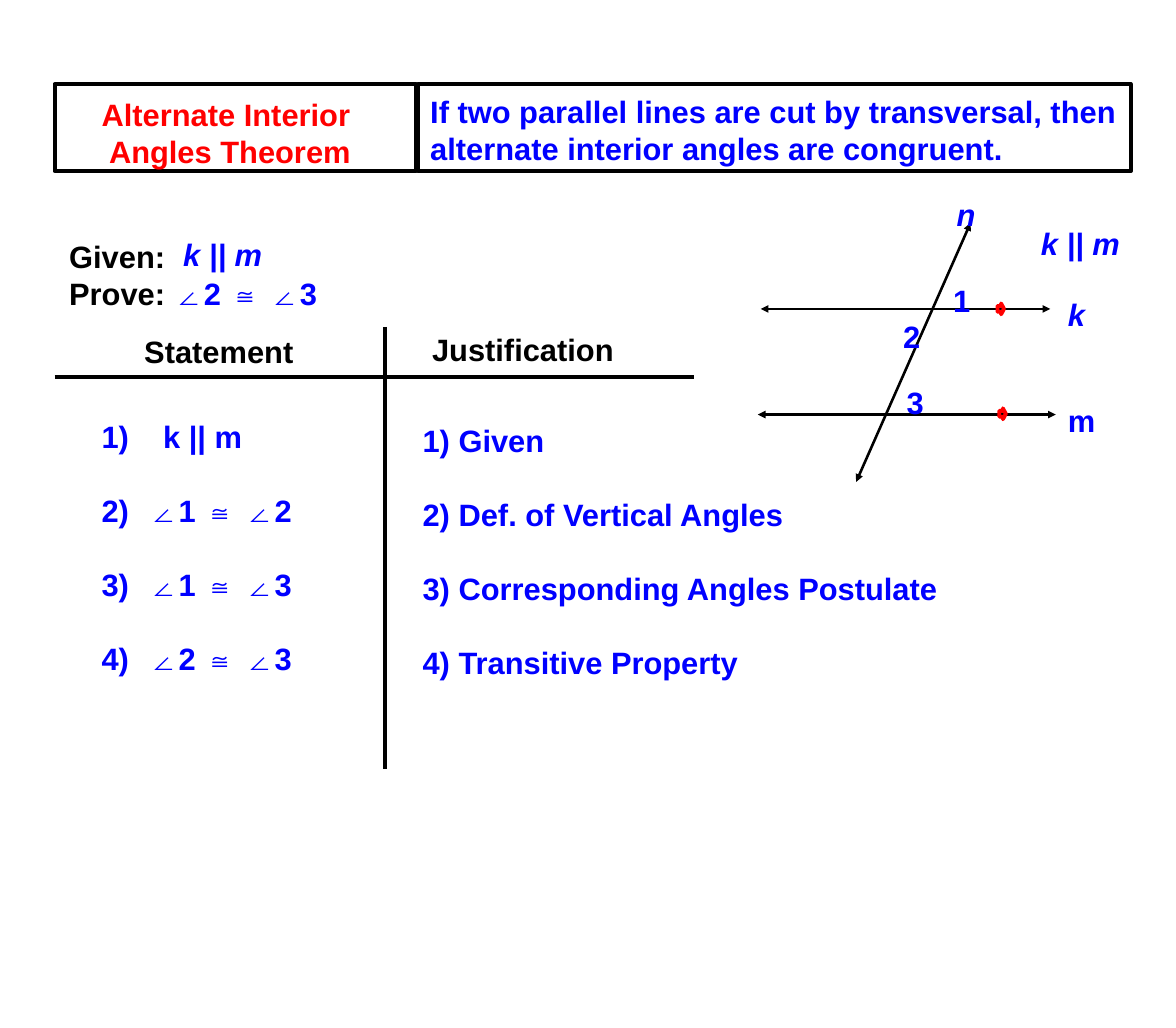
import pptx
import pptx.util
import pptx.dml.color
import pptx.enum.shapes
import pptx.oxml.ns
from lxml import etree

Cm, Pt = pptx.util.Cm, pptx.util.Pt
BLACK = pptx.dml.color.RGBColor(0x00, 0x00, 0x00)
BLUE = pptx.dml.color.RGBColor(0x00, 0x00, 0xFF)
RED = pptx.dml.color.RGBColor(0xFF, 0x00, 0x00)
WHITE = pptx.dml.color.RGBColor(0xFF, 0xFF, 0xFF)

LINE_HEIGHT = Pt(28.8)
HANGING = Cm(1.27)
ONE_LINE = 1.27
TWO_LINES = 2.31


def add_text(slide, text, left, top, width, height=ONE_LINE, *, color=BLUE,
             italic=False, gap=Pt(0), indents=()):
    """Write one paragraph per line; indents holds a hanging indent for each line."""
    box = slide.shapes.add_textbox(Cm(left), Cm(top), Cm(width), Cm(height))
    frame = box.text_frame
    frame.word_wrap = True
    frame.text = text
    for index, paragraph in enumerate(frame.paragraphs):
        paragraph.line_spacing = LINE_HEIGHT
        paragraph.space_before = gap if index else Pt(0)
        for run in paragraph.runs:
            run.font.name = "Arial"
            run.font.size = Pt(24)
            run.font.bold = True
            run.font.italic = italic
            run.font.color.rgb = color
    for paragraph, indent in zip(frame.paragraphs, indents):
        properties = paragraph._p.get_or_add_pPr()
        properties.set("marL", str(indent))
        properties.set("indent", str(-indent))


def add_line(slide, x1, y1, x2, y2, *, weight=3, arrows=False):
    line = slide.shapes.add_connector(
        pptx.enum.shapes.MSO_CONNECTOR.STRAIGHT, Cm(x1), Cm(y1), Cm(x2), Cm(y2))
    line.line.color.rgb = BLACK
    line.line.width = Pt(weight)
    if arrows:
        outline = line.line._get_or_add_ln()
        for end in ("a:headEnd", "a:tailEnd"):
            etree.SubElement(outline, pptx.oxml.ns.qn(end), type="triangle")
    etree.SubElement(line._element.spPr, pptx.oxml.ns.qn("a:effectLst"))


def add_frame(slide, left, width, *, fill=None):
    frame = slide.shapes.add_shape(
        pptx.enum.shapes.MSO_SHAPE.RECTANGLE, Cm(left), Cm(2.31), Cm(width), Cm(2.39))
    frame.shadow.inherit = False
    if fill is None:
        frame.fill.background()
    else:
        frame.fill.solid()
        frame.fill.fore_color.rgb = fill
    frame.line.color.rgb = BLACK
    frame.line.width = Pt(3)


def add_parallel_mark(slide, left, middle):
    """Draw the small red arrow that marks a line as parallel."""
    outline = [(0.1, 0.15), (0.1, 0.08), (0, 0.08), (0, -0.08),
               (0.1, -0.08), (0.1, -0.15), (0.18, 0)]
    points = [(Cm(left + dx), Cm(middle + dy)) for dx, dy in outline]
    builder = slide.shapes.build_freeform(*points[0])
    builder.add_line_segments(points[1:], close=True)
    mark = builder.convert_to_shape()
    mark.shadow.inherit = False
    mark.fill.background()
    mark.line.color.rgb = RED
    mark.line.width = Pt(3)


def add_theorem(slide):
    add_text(slide, "If two parallel lines are cut by transversal, then "
             "alternate interior angles are congruent.", 11.56, 2.41, 19.66, TWO_LINES)
    add_frame(slide, 1.5, 9.93, fill=WHITE)
    add_text(slide, "Alternate Interior\n Angles Theorem", 2.54, 2.51, 7.75, TWO_LINES,
             color=RED)
    add_frame(slide, 11.48, 19.56)


def add_diagram(slide):
    add_line(slide, 20.88, 8.48, 28.83, 8.48, weight=2, arrows=True)
    add_line(slide, 20.8, 11.38, 28.98, 11.38, weight=2, arrows=True)
    add_line(slide, 26.64, 6.12, 23.5, 13.23, weight=2, arrows=True)
    for label, left, top, italic in [
            ("1", 25.91, 7.62, False), ("2", 24.54, 8.59, False),
            ("3", 24.64, 10.41, False), ("k", 29.06, 8, True),
            ("m", 29.06, 10.9, False), ("n", 26.01, 5.26, True)]:
        add_text(slide, label, left, top, 1.5, italic=italic)
    add_text(slide, "k || m", 28.32, 6.05, 2.9, italic=True)
    add_parallel_mark(slide, 27.38, 8.48)
    add_parallel_mark(slide, 27.43, 11.36)


def add_proof(slide):
    add_text(slide, "Given:\nProve:", 1.65, 6.4, 4.19, TWO_LINES, color=BLACK)
    add_text(slide, "k || m", 4.78, 6.35, 2.9, italic=True)
    add_text(slide, "∠2 ≅ ∠3", 4.5, 7.42, 6.22)

    add_line(slide, 1.5, 10.36, 19.05, 10.36)
    add_line(slide, 10.57, 8.97, 10.57, 21.11)
    add_text(slide, "Statement", 3.71, 9.02, 5.82, color=BLACK)
    add_text(slide, "Justification", 11.61, 8.94, 6.45, color=BLACK)

    statements = ["1)\tk || m", "2)\t∠1 ≅ ∠2", "3)\t∠1 ≅ ∠3", "4)\t∠2 ≅ ∠3"]
    add_text(slide, "\n".join(statements), 2.54, 11.33, 8.03, 8.46,
             gap=LINE_HEIGHT, indents=[Cm(1.69)] + [HANGING] * 3)
    justifications = ["1) Given", "2) Def. of Vertical Angles",
                      "3) Corresponding Angles Postulate", "4) Transitive Property"]
    add_text(slide, "\n".join(justifications), 11.35, 11.46, 16.97, 7.44,
             gap=LINE_HEIGHT)


def main():
    presentation = pptx.Presentation()
    presentation.slide_width = Cm(32.28)
    presentation.slide_height = Cm(28.22)
    slide = presentation.slides.add_slide(presentation.slide_layouts[6])
    add_proof(slide)
    add_diagram(slide)
    add_theorem(slide)
    presentation.save("out.pptx")


if __name__ == "__main__":
    main()
